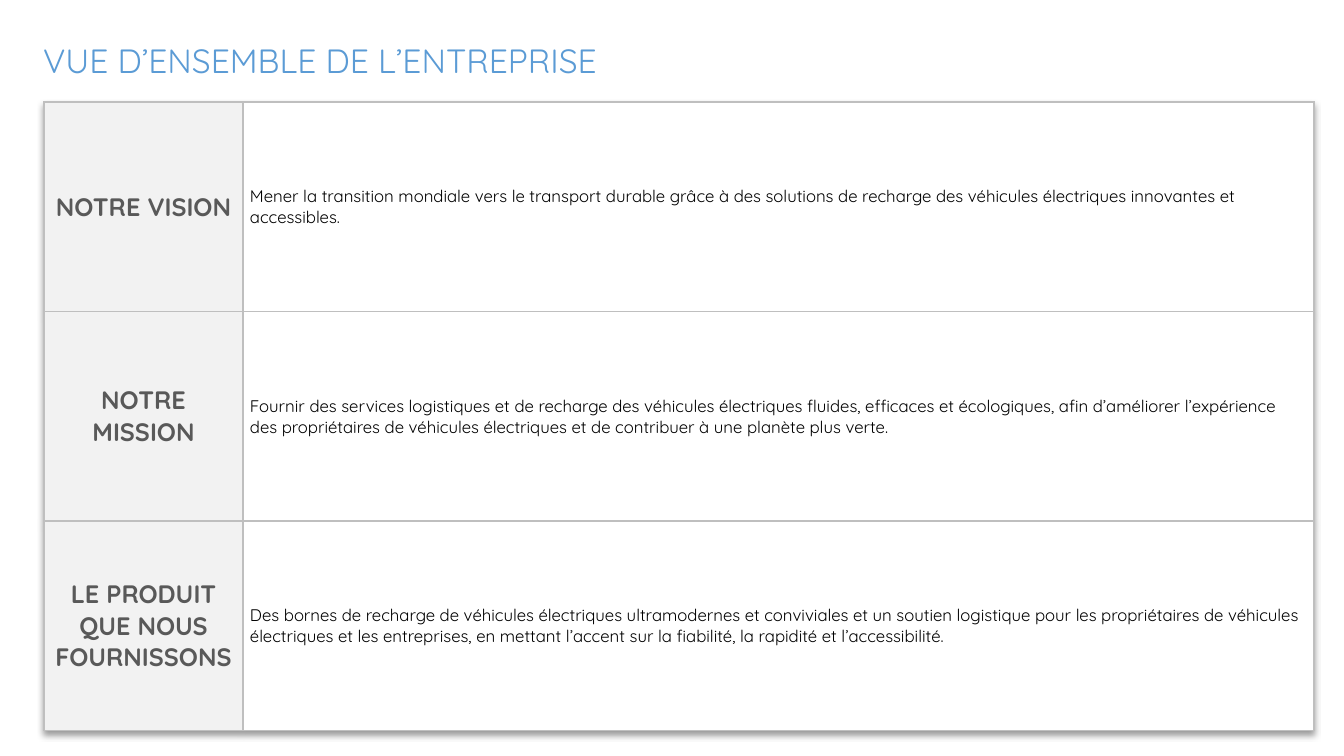
from lxml import etree
from pptx import Presentation
from pptx import util as u
from pptx.dml import color
from pptx.enum import text
from pptx.oxml import ns

SCALE = 12192000 / 1344
COLORS = {
    "title": "5B9BD5",
    "label": "595959",
    "body": "000000",
    "label_fill": "F2F2F2",
    "body_fill": "FFFFFF",
    "border": "BFBFBF",
}
ROWS = [
    ("NOTRE VISION",
     "Mener la transition mondiale vers le transport durable grâce à des solutions de recharge "
     "des véhicules électriques innovantes et accessibles."),
    ("NOTRE MISSION",
     "Fournir des services logistiques et de recharge des véhicules électriques fluides, efficaces "
     "et écologiques, afin d’améliorer l’expérience des propriétaires de véhicules électriques et "
     "de contribuer à une planète plus verte."),
    ("LE PRODUIT QUE NOUS FOURNISSONS",
     "Des bornes de recharge de véhicules électriques ultramodernes et conviviales et un soutien "
     "logistique pour les propriétaires de véhicules électriques et les entreprises, en mettant "
     "l’accent sur la fiabilité, la rapidité et l’accessibilité."),
]


def px(length):
    return u.Emu(round(length * SCALE))


def add_xml(parent, tag, **attributes):
    return etree.SubElement(parent, ns.qn(tag), attributes)


class SlideBuilder:
    """Holds the font, the palette and the current slide."""

    def __init__(self, slide, font, colors):
        self.slide = slide
        self.font = font
        self.colors = colors

    def rgb(self, name):
        return color.RGBColor.from_string(self.colors[name])

    def style(self, para, size, name, bold=False, align=text.PP_ALIGN.LEFT):
        para.alignment = align
        para.font.name = self.font
        para.font.size = u.Pt(size)
        para.font.bold = bold
        para.font.color.rgb = self.rgb(name)

    def title(self, words, left, top, width, height):
        box = self.slide.shapes.title
        box.left, box.top, box.width, box.height = map(px, (left, top, width, height))
        frame = box.text_frame
        frame.text = words
        frame.word_wrap = True
        frame.auto_size = text.MSO_AUTO_SIZE.SHAPE_TO_FIT_TEXT
        frame.vertical_anchor = text.MSO_ANCHOR.TOP
        self.style(frame.paragraphs[0], 24, "title")

    def borders(self, cell):
        properties = cell._tc.get_or_add_tcPr()
        for side in ("a:lnL", "a:lnR", "a:lnT", "a:lnB"):
            line = add_xml(properties, side, w=str(u.Pt(1)))
            fill = add_xml(line, "a:solidFill")
            add_xml(fill, "a:srgbClr", val=self.colors["border"])

    def cell(self, cell, words, fill):
        self.borders(cell)
        cell.fill.solid()
        cell.fill.fore_color.rgb = self.rgb(fill)
        cell.vertical_anchor = text.MSO_ANCHOR.MIDDLE
        cell.text = words
        return cell.text_frame.paragraphs[0]

    def shadow(self, table):
        effects = etree.Element(ns.qn("a:effectLst"))
        outer = add_xml(effects, "a:outerShdw", blurRad=str(u.Pt(4)), dist=str(u.Pt(3)),
                        dir="5400000", algn="t", rotWithShape="0")
        black = add_xml(outer, "a:srgbClr", val="000000")
        add_xml(black, "a:alpha", val="40000")
        table._tbl.tblPr.insert(0, effects)

    def table(self, rows, left, top, widths, row_height):
        frame = self.slide.shapes.add_table(
            len(rows), len(widths), px(left), px(top), px(sum(widths)), px(row_height * len(rows)))
        table = frame.table
        table.first_row = table.horz_banding = False
        self.shadow(table)
        for column, width in zip(table.columns, widths):
            column.width = px(width)
        for row, (label, body) in zip(table.rows, rows):
            row.height = px(row_height)
            label_cell, body_cell = row.cells
            para = self.cell(label_cell, label, "label_fill")
            self.style(para, 18, "label", True, text.PP_ALIGN.CENTER)
            para = self.cell(body_cell, body, "body_fill")
            self.style(para, 12, "body")
            body_cell.margin_left = body_cell.margin_right = px(7)
            body_cell.margin_top = body_cell.margin_bottom = 0


def main():
    deck = Presentation()
    deck.slide_width, deck.slide_height = px(1344), px(756)
    page = deck.slides.add_slide(deck.slide_layouts[5])
    builder = SlideBuilder(page, "Quicksand", COLORS)
    builder.title("VUE D’ENSEMBLE DE L’ENTREPRISE", 33, 35, 814, 50)
    builder.table(ROWS, 44, 102, (199, 1071), 209.5)
    deck.save("out.pptx")


if __name__ == "__main__":
    main()
